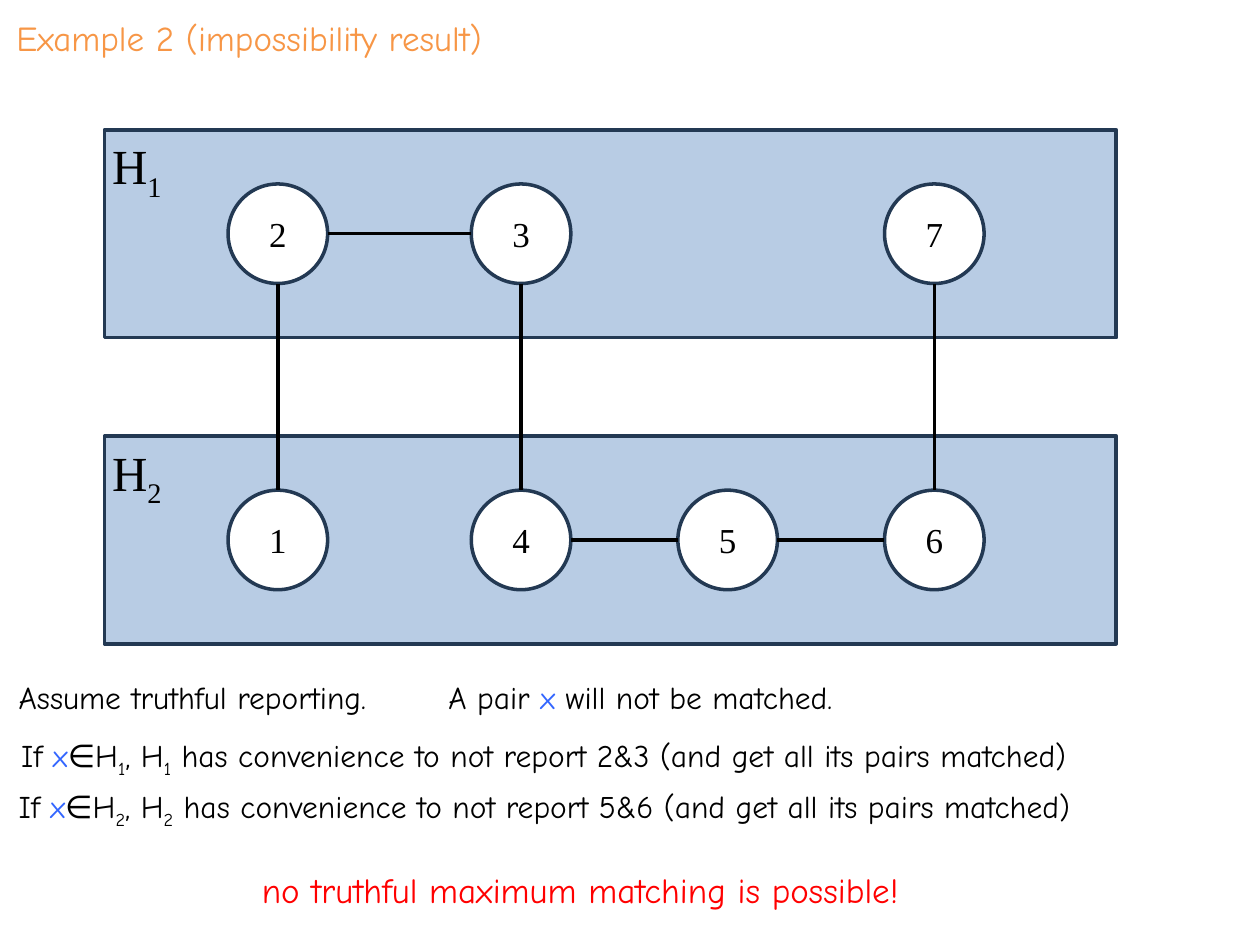
from lxml.etree import SubElement
from pptx import Presentation
from pptx.dml.color import RGBColor
from pptx.enum.shapes import MSO_CONNECTOR, MSO_SHAPE
from pptx.enum.text import MSO_ANCHOR, MSO_AUTO_SIZE, PP_ALIGN
from pptx.oxml.ns import qn
from pptx.util import Inches, Pt

COLORS = {"title": "F79646", "band": "4F81BD", "outline": "233953", "node": "FFFFFF",
          "text": "000000", "variable": "3366FF", "alert": "FF0000"}
HAND, SERIF = "Comic Neue", "Times New Roman"

TITLE = "Example 2 (impossibility result)"
BANDS = ["1", "2"]
NODES = {"2": (0, 0), "3": (1, 0), "7": (3, 0),
         "1": (0, 1), "4": (1, 1), "5": (2, 1), "6": (3, 1)}
EDGES = [("2", "1"), ("2", "3"), ("5", "6"), ("7", "6"), ("3", "4"), ("4", "5")]


def case(hospital, pairs):
    return [("If ", ""), ("x", "variable"), ("∈H", ""), (hospital, "sub"), (", H", ""),
            (hospital, "sub"),
            (f" has convenience to not report {pairs} (and get all its pairs matched)", "")]


NOTES = [
    (0.05, 5.33, 3.37, 18, "text", [("Assume truthful reporting.", "")]),
    (3.46, 5.33, 4.12, 18, "text",
     [("A pair ", ""), ("x", "variable"), (" will not be matched.", "")]),
    (0.07, 5.79, 9.89, 18, "text", case("1", "2&3")),
    (0.05, 6.2, 9.89, 18, "text", case("2", "5&6")),
    (1.98, 6.84, 5.94, 20, "alert", [("no truthful maximum matching is possible!", "")]),
]

BAND_LEFT, BAND_TOP, BAND_W, BAND_H = 0.83, 1.03, 8.03, 1.65
ROW_STEP, NODE_SIZE, NODE_DROP = 2.43, 0.79, 0.43
COLUMNS = [1.81, 3.74, 5.38, 7.02]


def rgb(name):
    return RGBColor.from_string(COLORS[name])


def write(tf, runs, size, font, color="text", align=PP_ALIGN.LEFT):
    p = tf.paragraphs[0]
    p.alignment = align
    p.font.size, p.font.name = Pt(size), font
    p.font.color.rgb = rgb(color)
    for text, style in runs:
        r = p.add_run()
        r.text = text
        if style == "sub":
            r.font._element.set("baseline", "-25000")
        elif style:
            r.font.color.rgb = rgb(style)


def add_outlined(s, kind, box, fill):
    sp = s.shapes.add_shape(kind, *map(Inches, box))
    sp.shadow.inherit = False
    sp.fill.solid()
    sp.fill.fore_color.rgb = rgb(fill)
    sp.line.color.rgb = rgb("outline")
    sp.line.width = Pt(2)
    return sp


def add_band(s, row, label):
    sp = add_outlined(s, MSO_SHAPE.RECTANGLE,
                      (BAND_LEFT, BAND_TOP + row * ROW_STEP, BAND_W, BAND_H), "band")
    color = sp._element.spPr.find(qn("a:solidFill"))[0]
    SubElement(color, qn("a:alpha")).set("val", "40000")
    tf = sp.text_frame
    tf.vertical_anchor = MSO_ANCHOR.TOP
    tf.margin_left = Inches(0.06)
    write(tf, [("H", ""), (label, "sub")], 28, SERIF)


def add_node(s, label, col, row):
    top = BAND_TOP + NODE_DROP + row * ROW_STEP
    sp = add_outlined(s, MSO_SHAPE.OVAL, (COLUMNS[col], top, NODE_SIZE, NODE_SIZE), "node")
    sp.text_frame.vertical_anchor = MSO_ANCHOR.MIDDLE
    write(sp.text_frame, [(label, "")], 20, SERIF, align=PP_ALIGN.CENTER)
    return sp


def add_edge(s, a, b):
    half = a.width // 2
    if a.top == b.top:
        y = a.top + half
        ends = (a.left + a.width, y, b.left, y)
    else:
        x = a.left + half
        ends = (x, a.top + a.height, x, b.top)
    cn = s.shapes.add_connector(MSO_CONNECTOR.STRAIGHT, *ends)
    cn.line.color.rgb = rgb("text")
    cn.line.width = Pt(2)
    SubElement(cn._element.spPr, qn("a:effectLst"))


def main():
    prs = Presentation()
    prs.slide_width, prs.slide_height = Inches(10), Inches(7.5)
    s = prs.slides.add_slide(prs.slide_layouts[5])

    title = s.shapes.title
    title.left, title.top, title.width, title.height = map(Inches, (0.03, 0.08, 9.69, 0.44))
    title.text_frame.auto_size = MSO_AUTO_SIZE.NONE
    write(title.text_frame, [(TITLE, "")], 20, HAND, "title")

    for row, label in enumerate(BANDS):
        add_band(s, row, label)
    nodes = {label: add_node(s, label, *cell) for label, cell in NODES.items()}
    for a, b in EDGES:
        add_edge(s, nodes[a], nodes[b])

    for left, top, width, size, color, runs in NOTES:
        tb = s.shapes.add_textbox(*map(Inches, (left, top, width, size / 45)))
        tb.text_frame.word_wrap = True
        write(tb.text_frame, runs, size, HAND, color)

    prs.save("out.pptx")


if __name__ == "__main__":
    main()
